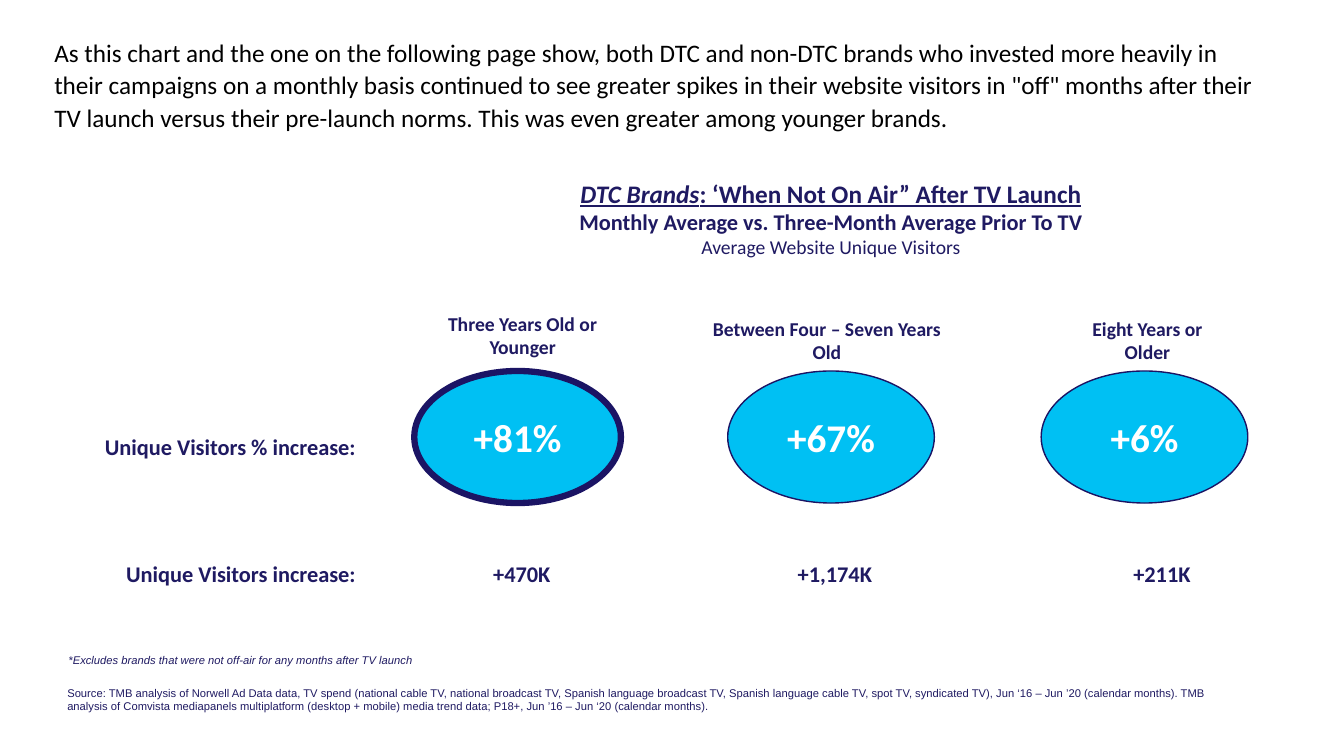
from pptx import Presentation
from pptx.dml.color import RGBColor
from pptx.enum.shapes import MSO_SHAPE
from pptx.enum.text import MSO_ANCHOR, PP_ALIGN
from pptx.util import Pt

NAVY = "1F1A62"
OUTLINE = "1B1464"
CYAN = "00C0F3"
INTRO = (
    "As this chart and the one on the following page show, both DTC and non-DTC brands "
    "who invested more heavily in their campaigns on a monthly basis continued to see "
    "greater spikes in their website visitors in \"off\" months after their TV launch "
    "versus their pre-launch norms. This was even greater among younger brands."
)
SOURCE = (
    "Source: TMB analysis of Norwell Ad Data data, TV spend (national cable TV, national "
    "broadcast TV, Spanish language broadcast TV, Spanish language cable TV, spot TV, "
    "syndicated TV), Jun ‘16 – Jun ’20 (calendar months). TMB analysis of Comvista "
    "mediapanels multiplatform (desktop + mobile) media trend data; P18+, Jun ’16 – "
    "Jun ‘20 (calendar months)."
)
FOOTNOTE = "*Excludes brands that were not off-air for any months after TV launch"
ROW_LABELS = [("Unique Visitors % increase:", 306), ("Unique Visitors increase:", 396.7)]
# label, (left, top, width), percent, outline width, increase, (left, width)
AGE_GROUPS = [
    ("Three Years Old or Younger", (306.7, 219, 133.2), "+81%", 4.5, "+470K", (331.2, 69.1)),
    ("Between Four – Seven Years Old", (491, 222.5, 199.4), "+67%", 1, "+1,174K", (554.4, 75.6)),
    ("Eight Years or Older", (766.8, 222.5, 105.8), "+6%", 1, "+211K", (788.4, 69.1)),
]


def rgb(value):
    """Turn a hex string into a colour."""
    return RGBColor.from_string(value)


def add_run(p, text, size=16, color=NAVY, font="Calibri", bold=False, italic=False,
            underline=False):
    """Append a formatted run to a paragraph."""
    r = p.add_run()
    r.text = text
    r.font.name = font
    r.font.size = Pt(size)
    r.font.bold = bold
    r.font.italic = italic
    r.font.underline = underline
    r.font.color.rgb = rgb(color)


def add_box(s, left, top, width, height):
    """Add a wrapping text box and return its text frame."""
    tf = s.shapes.add_textbox(Pt(left), Pt(top), Pt(width), Pt(height)).text_frame
    tf.word_wrap = True
    return tf


def add_text(s, box, text, align=PP_ALIGN.LEFT, before=0, after=0, spacing=1.0, **style):
    """Add a text box holding one paragraph."""
    p = add_box(s, *box).paragraphs[0]
    p.alignment = align
    p.space_before = Pt(before)
    p.space_after = Pt(after)
    p.line_spacing = spacing
    add_run(p, text, **style)


def add_heading(s):
    """Add the three-line chart heading."""
    tf = add_box(s, 295.9, 123.8, 595.4, 65.5)
    title, subtitle, measure = tf.paragraphs[0], tf.add_paragraph(), tf.add_paragraph()
    for p in (title, subtitle, measure):
        p.alignment = PP_ALIGN.CENTER
    add_run(title, "DTC Brands", size=18, bold=True, italic=True, underline=True)
    add_run(title, ": ‘When Not On Air” After TV Launch", size=18, bold=True, underline=True)
    add_run(subtitle, "Monthly Average vs. Three-Month Average Prior To TV", bold=True)
    add_run(measure, "Average Website Unique Visitors", size=14)


def add_ellipse(s, left, text, line_width):
    """Add an ellipse showing a percentage."""
    sp = s.shapes.add_shape(MSO_SHAPE.OVAL, Pt(left), Pt(265), Pt(147.6), Pt(94.3))
    sp.shadow.inherit = False
    sp.fill.solid()
    sp.fill.fore_color.rgb = rgb(CYAN)
    sp.line.color.rgb = rgb(OUTLINE)
    sp.line.width = Pt(line_width)
    tf = sp.text_frame
    tf.vertical_anchor = MSO_ANCHOR.MIDDLE
    p = tf.paragraphs[0]
    p.alignment = PP_ALIGN.CENTER
    add_run(p, text, size=28, color="FFFFFF", bold=True)


def main():
    """Build the slide and save it."""
    prs = Presentation()
    prs.slide_width, prs.slide_height = Pt(960), Pt(540)
    s = prs.slides.add_slide(prs.slide_layouts[6])
    add_text(s, (31.7, 21.6, 877, 169.9), INTRO, after=8, spacing=1.07, size=18,
             color="000000")
    add_heading(s)
    for label, top in ROW_LABELS:
        add_text(s, (8.6, top, 252.7, 26.6), label, PP_ALIGN.RIGHT, bold=True)
    for i, (label, (left, top, width), percent, line_width, increase, column) in enumerate(
            AGE_GROUPS):
        add_text(s, (left, top, width, 41), label, PP_ALIGN.CENTER, size=14, bold=True)
        add_ellipse(s, 295.9 + i * 223.9, percent, line_width)
        add_text(s, (column[0], 396.7, column[1], 26.6), increase, PP_ALIGN.RIGHT, bold=True)
    add_text(s, (41.8, 463, 832.3, 19.4), FOOTNOTE, before=1.6, size=8, font="Arial",
             italic=True)
    add_text(s, (41, 486.7, 832.3, 27.4), SOURCE, before=1.6, size=8, font="Arial")
    prs.save("out.pptx")


if __name__ == "__main__":
    main()
